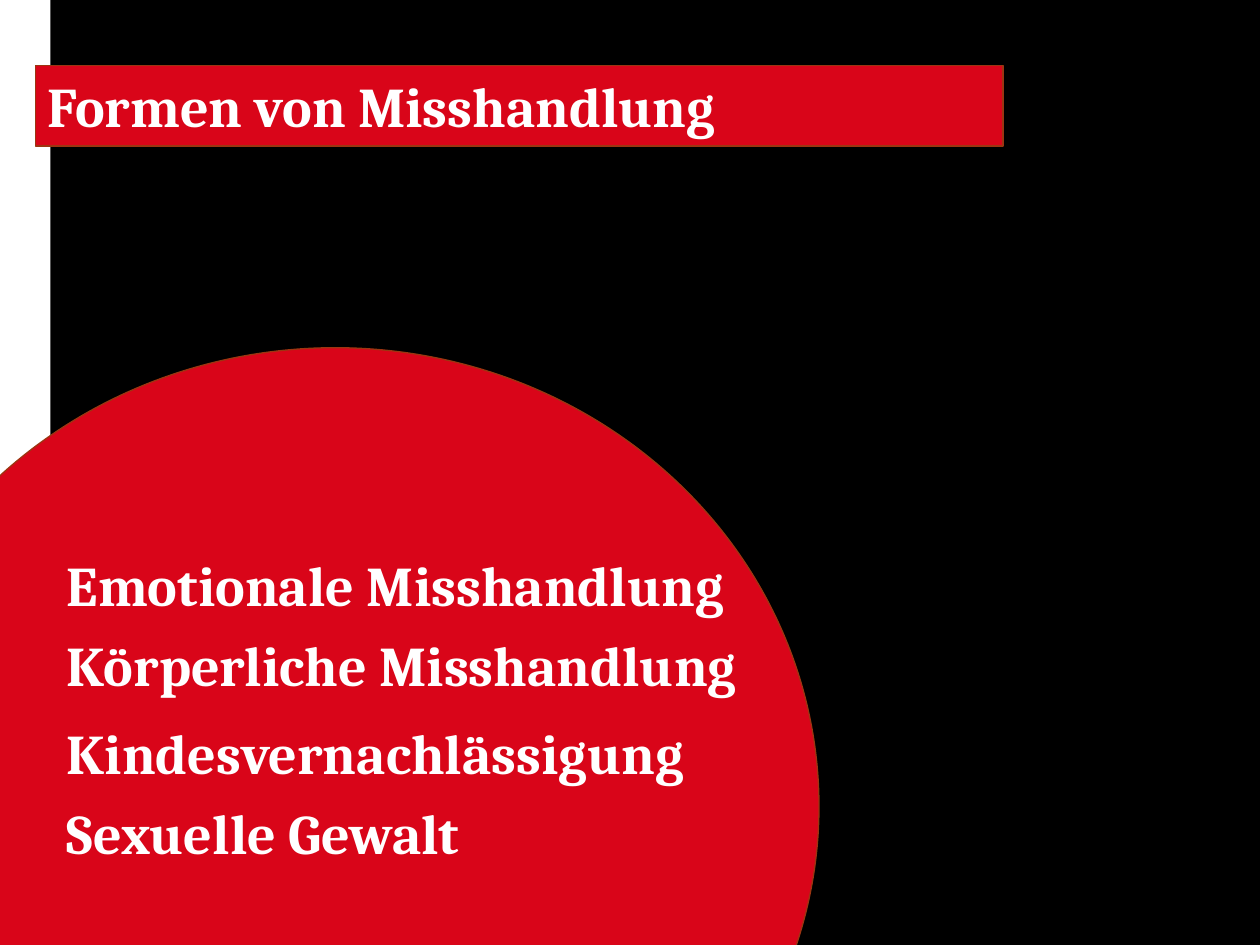
from pptx import Presentation
from pptx.dml.color import RGBColor
from pptx.enum.shapes import MSO_SHAPE as Shape
from pptx.enum.text import MSO_ANCHOR as Anchor, MSO_AUTO_SIZE as AutoSize, PP_ALIGN as Align
from pptx.oxml.xmlchemy import OxmlElement
from pptx.util import Inches, Pt

COLORS = {"black": "000000", "white": "FFFFFF", "red": "D90519", "rust": "9C3511"}


class SlideBuilder:
    font_name = "Cambria"
    font_size = Pt(32)

    def __init__(self, slide):
        self.slide = slide

    def color(self, name):
        return RGBColor.from_string(COLORS[name])

    def background(self, name):
        fill = self.slide.background.fill
        fill.solid()
        fill.fore_color.rgb = self.color(name)

    def paint(self, shape, fill, line=None):
        shape.fill.solid()
        shape.fill.fore_color.rgb = self.color(fill)
        if line:
            shape.line.color.rgb = self.color(line)
            shape.line.width = Pt(0.75)
        else:
            shape.line.fill.background()

    def preset(self, kind, box, fill, line=None):
        shape = self.slide.shapes.add_shape(kind, *map(Inches, box))
        shape.shadow.inherit = False
        self.paint(shape, fill, line)

    def placeholder(self, index, box, lines):
        """Place and fill a template placeholder, in front of what is drawn so far."""
        holder = self.slide.placeholders[index]
        holder.left, holder.top, holder.width, holder.height = map(Inches, box)
        self.slide.shapes._spTree.append(holder._element)
        frame = holder.text_frame
        frame.text = "\n".join(lines)
        frame.word_wrap = True
        frame.auto_size = AutoSize.NONE
        frame.vertical_anchor = Anchor.TOP
        for paragraph in frame.paragraphs:
            paragraph.alignment = Align.LEFT
            paragraph.space_before = Pt(0)
            properties = paragraph._p.get_or_add_pPr()
            properties.set("marL", "0")
            properties.set("indent", "0")
            properties.append(OxmlElement("a:buNone"))
            for run in paragraph.runs:
                run.font.name = self.font_name
                run.font.size = self.font_size
                run.font.bold = True
                run.font.color.rgb = self.color("white")
        return holder

    def title(self, box, text):
        self.paint(self.placeholder(0, box, [text]), "red", "rust")

    def topics(self, box, groups):
        """List all topics, with a small gap before each later group."""
        lines = [topic for group in groups for topic in group]
        paragraphs = self.placeholder(1, box, lines).text_frame.paragraphs
        for paragraph in paragraphs:
            paragraph.line_spacing = Pt(45.5)
        start = 0
        for group in groups[:-1]:
            start += len(group)
            paragraphs[start].space_before = Pt(5)


def main():
    presentation = Presentation()
    presentation.slide_width, presentation.slide_height = Inches(10), Inches(7.5)
    builder = SlideBuilder(presentation.slides.add_slide(presentation.slide_layouts[1]))

    builder.background("black")
    builder.preset(Shape.RECTANGLE, (0, 0, 0.4, 7.5), "white")
    builder.title((0.28, 0.52, 7.68, 0.64), "Formen von Misshandlung")
    builder.preset(Shape.OVAL, (-1.18, 2.76, 7.68, 7.28), "red", "rust")
    builder.topics((0.43, 4.22, 6.06, 2.68), [
        ["Emotionale Misshandlung", "Körperliche Misshandlung"],
        ["Kindesvernachlässigung", "Sexuelle Gewalt"],
    ])
    presentation.save("out.pptx")


if __name__ == "__main__":
    main()
